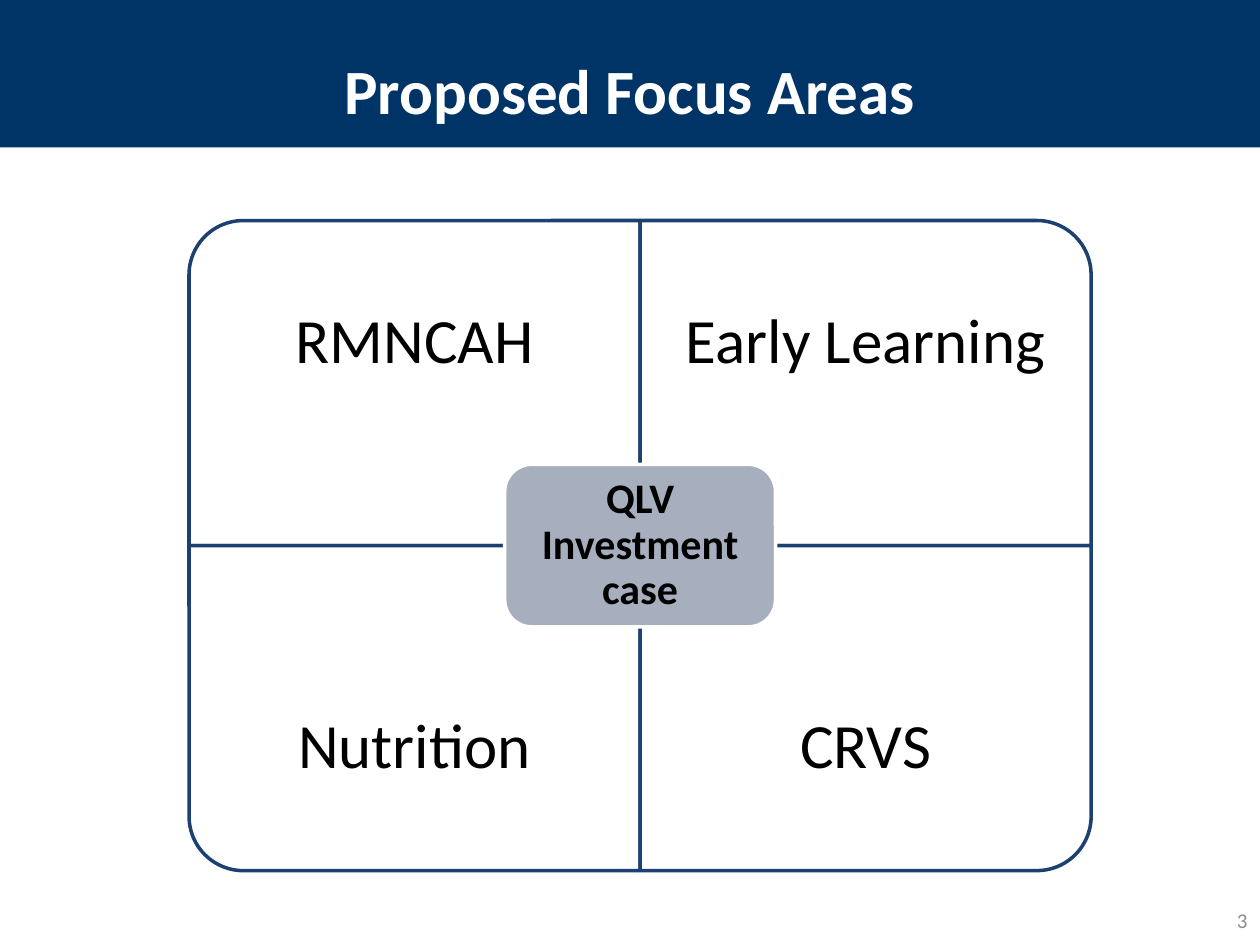
import pptx
import pptx.dml.color
import pptx.enum.shapes
import pptx.enum.text
import pptx.util
from pptx.util import Inches

MSO_SHAPE = pptx.enum.shapes.MSO_SHAPE
PP_ALIGN = pptx.enum.text.PP_ALIGN
COLORS = {
    "banner": "003366",
    "outline": "1C4170",
    "center": "A7AFBE",
    "white": "FFFFFF",
    "black": "000000",
    "number": "8C8C8C",
}


def write_text(shape, text, size, color="black", bold=False,
               align=PP_ALIGN.CENTER, inset=0.1, inset_y=None, spacing=None):
    frame = shape.text_frame
    frame.word_wrap = True
    frame.auto_size = pptx.enum.text.MSO_AUTO_SIZE.NONE
    frame.vertical_anchor = pptx.enum.text.MSO_ANCHOR.MIDDLE
    frame.margin_left = frame.margin_right = Inches(inset)
    frame.margin_top = frame.margin_bottom = Inches(inset if inset_y is None else inset_y)
    paragraph = frame.paragraphs[0]
    paragraph.alignment = align
    paragraph.line_spacing = spacing
    run = paragraph.add_run()
    run.text = text
    run.font.name = "Calibri"
    run.font.size = pptx.util.Pt(size)
    run.font.bold = bold
    run.font.color.rgb = pptx.dml.color.RGBColor.from_string(COLORS[color])


def add_block(slide, kind, left, top, width, height, fill, line=None):
    shape = slide.shapes.add_shape(
        kind, Inches(left), Inches(top), Inches(width), Inches(height))
    shape.shadow.inherit = False
    shape.fill.solid()
    shape.fill.fore_color.rgb = pptx.dml.color.RGBColor.from_string(COLORS[fill])
    if line:
        shape.line.color.rgb = pptx.dml.color.RGBColor.from_string(COLORS[line])
        shape.line.width = pptx.util.Pt(2)
        shape.adjustments[0] = 0.167
    else:
        shape.line.fill.background()
    return shape


presentation = pptx.Presentation()
presentation.slide_width = Inches(10)
presentation.slide_height = Inches(7.5)
slide = presentation.slides.add_slide(presentation.slide_layouts[5])

# Banner, title and slide number
banner = add_block(slide, MSO_SHAPE.RECTANGLE, 0, 0, 10, 1.17, "banner")
title = slide.shapes.title
title.left, title.top = Inches(0), Inches(0.17)
title.width, title.height = Inches(10), Inches(1.07)
write_text(title, "Proposed Focus Areas", 36, color="white", bold=True, inset_y=0.05)
banner.element.addnext(title.element)

number = slide.shapes.add_textbox(Inches(7.67), Inches(7.1), Inches(2.33), Inches(0.4))
write_text(number, "3", 12, color="number", align=PP_ALIGN.RIGHT, inset_y=0.05)

# Four quadrants, each turned so that its round corner points outwards
CENTER_X, CENTER_Y = 5.08, 4.33
QUADRANT_WIDTH, QUADRANT_HEIGHT = 3.58, 2.58
LABEL_HEIGHT = 1.94
quadrants = [
    ("RMNCAH", 0, 0, 270),
    ("Early Learning", 1, 0, 0),
    ("Nutrition", 0, 1, 180),
    ("CRVS", 1, 1, 90),
]
for text, column, row, rotation in quadrants:
    left = CENTER_X + (column - 1) * QUADRANT_WIDTH
    top = CENTER_Y + (row - 1) * QUADRANT_HEIGHT
    width, height = QUADRANT_WIDTH, QUADRANT_HEIGHT
    if rotation in (90, 270):
        width, height = height, width
    quadrant = add_block(
        slide, MSO_SHAPE.ROUND_1_RECTANGLE,
        left + (QUADRANT_WIDTH - width) / 2, top + (QUADRANT_HEIGHT - height) / 2,
        width, height, "white", line="outline")
    quadrant.rotation = rotation

    label_top = top + row * (QUADRANT_HEIGHT - LABEL_HEIGHT)
    label = slide.shapes.add_textbox(
        Inches(left), Inches(label_top), Inches(QUADRANT_WIDTH), Inches(LABEL_HEIGHT))
    write_text(label, text, 36, inset=0.28, spacing=0.9)

# Center box
center = add_block(slide, MSO_SHAPE.ROUNDED_RECTANGLE,
                   CENTER_X - 2.15 / 2, CENTER_Y - 1.29 / 2, 2.15, 1.29,
                   "center", line="white")
write_text(center, "QLV Investment case", 24, bold=True, inset=0.15, spacing=0.9)

presentation.save("out.pptx")
